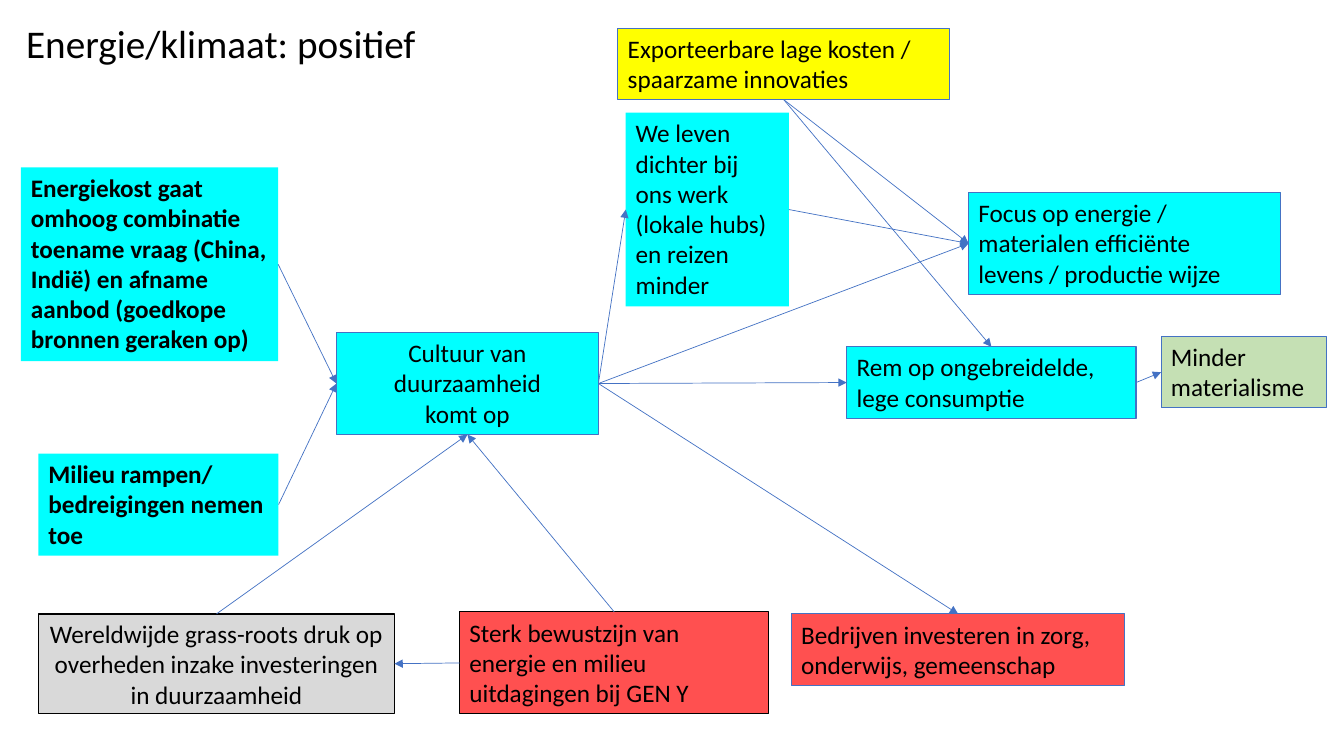
from dataclasses import dataclass

from lxml import etree
from pptx import Presentation
from pptx.dml.color import RGBColor
from pptx.enum.shapes import MSO_CONNECTOR, MSO_SHAPE
from pptx.enum.text import MSO_ANCHOR, MSO_AUTO_SIZE, PP_ALIGN
from pptx.oxml.ns import qn
from pptx.util import Cm, Pt

RECTANGLE = MSO_SHAPE.RECTANGLE
STRAIGHT = MSO_CONNECTOR.STRAIGHT
GROW = MSO_AUTO_SIZE.SHAPE_TO_FIT_TEXT
FIXED = MSO_AUTO_SIZE.NONE
TOP_ANCHOR, MIDDLE = MSO_ANCHOR.TOP, MSO_ANCHOR.MIDDLE
LEFT_ALIGN, CENTER = PP_ALIGN.LEFT, PP_ALIGN.CENTER
TOP, LEFT, BOTTOM, RIGHT = range(4)


@dataclass(frozen=True)
class Theme:
    font: str = "Calibri"
    title_size: float = 28
    body_size: float = 18
    border_width: float = 0.75
    heavy_width: float = 1
    arrow_width: float = 0.5
    text: str = "000000"
    blue: str = "4472C4"
    cyan: str = "00FFFF"
    red: str = "FF5050"
    yellow: str = "FFFF00"
    grey: str = "D9D9D9"
    green: str = "C5E0B4"


@dataclass(frozen=True)
class Box:
    left: float
    top: float
    width: float
    height: float

    def within(self, outer):
        return Box(outer.left + self.left, outer.top + self.top, self.width, self.height)

    def lengths(self):
        return Cm(self.left), Cm(self.top), Cm(self.width), Cm(self.height)


@dataclass(frozen=True)
class Factor:
    text: str
    box: Box
    fill: str
    border: str = ""
    border_width: float = Theme.border_width
    bold: bool = False
    align: int = LEFT_ALIGN
    anchor: int = TOP_ANCHOR
    autosize: int = GROW


THEME = Theme()
TITLE_BOX = Box(0.41, -0.69, 29.21, 3.68)
DIAGRAM_BOX = Box(0.5, 0.7, 33, 17.3)

# Factor boxes are measured in cm from the corner of the diagram.
FACTORS = {
    "energy_cost": Factor(
        "Energiekost gaat omhoog combinatie toename vraag (China, Indië) "
        "en afname aanbod (goedkope bronnen geraken op)",
        Box(0.03, 3.52, 6.48, 4.88), THEME.cyan, bold=True),
    "disasters": Factor(
        "Milieu rampen/ bedreigingen nemen toe",
        Box(0.47, 10.73, 6.05, 2.57), THEME.cyan, bold=True),
    "gen_y": Factor(
        "Sterk bewustzijn van energie en milieu uitdagingen bij GEN Y",
        Box(11.08, 14.72, 7.8, 2.57), THEME.red, THEME.text),
    "grass_roots": Factor(
        "Wereldwijde grass-roots druk op overheden inzake investeringen in duurzaamheid",
        Box(0.47, 14.77, 8.97, 2.51), THEME.grey, THEME.text, THEME.heavy_width,
        align=CENTER, anchor=MIDDLE, autosize=FIXED),
    "innovations": Factor(
        "Exporteerbare lage kosten / spaarzame innovaties",
        Box(15.07, 0.01, 8.36, 1.8), THEME.yellow, THEME.blue),
    "culture": Factor(
        "Cultuur van duurzaamheid\nkomt op",
        Box(7.98, 7.68, 6.6, 2.57), THEME.cyan, THEME.blue, align=CENTER),
    "consumption": Factor(
        "Rem op ongebreidelde, lege consumptie",
        Box(20.84, 8.04, 7.29, 1.8), THEME.cyan, THEME.blue),
    "efficiency": Factor(
        "Focus op energie / materialen efficiënte levens / productie wijze",
        Box(23.91, 4.15, 7.87, 2.57), THEME.cyan, THEME.blue),
    "local_hubs": Factor(
        "We leven dichter bij ons werk (lokale hubs) en reizen minder",
        Box(15.27, 2.14, 4.11, 4.88), THEME.cyan),
    "materialism": Factor(
        "Minder materialisme",
        Box(28.76, 7.78, 4.17, 1.8), THEME.green, THEME.blue),
    "companies": Factor(
        "Bedrijven investeren in zorg, onderwijs, gemeenschap",
        Box(19.44, 14.77, 8.41, 1.8), THEME.red, THEME.blue),
}

INFLUENCES = [
    ("gen_y", TOP, "culture", BOTTOM),
    ("grass_roots", TOP, "culture", BOTTOM),
    ("gen_y", LEFT, "grass_roots", RIGHT),
    ("innovations", BOTTOM, "consumption", TOP),
    ("innovations", BOTTOM, "efficiency", LEFT),
    ("culture", RIGHT, "consumption", LEFT),
    ("culture", RIGHT, "efficiency", LEFT),
    ("energy_cost", RIGHT, "culture", LEFT),
    ("disasters", RIGHT, "culture", LEFT),
    ("culture", RIGHT, "local_hubs", LEFT),
    ("consumption", RIGHT, "materialism", LEFT),
    ("local_hubs", RIGHT, "efficiency", LEFT),
    ("culture", RIGHT, "companies", TOP),
]


def write_text(shape, text, *, size=THEME.body_size, bold=False, align=LEFT_ALIGN,
               anchor=TOP_ANCHOR, autosize=FIXED, spacing=1.0):
    frame = shape.text_frame
    frame.text = text
    frame.word_wrap = True
    frame.vertical_anchor = anchor
    frame.auto_size = autosize
    for paragraph in frame.paragraphs:
        paragraph.alignment = align
        paragraph.line_spacing = spacing
        for run in paragraph.runs:
            run.font.name = THEME.font
            run.font.size = Pt(size)
            run.font.bold = bold
            run.font.color.rgb = RGBColor.from_string(THEME.text)


def draw_title(slide, box):
    title = slide.shapes.add_textbox(*box.lengths())
    write_text(title, "Energie/klimaat: positief", size=THEME.title_size,
               anchor=MIDDLE, spacing=0.9)


def draw_factor(slide, factor, diagram_box):
    rectangle = slide.shapes.add_shape(RECTANGLE, *factor.box.within(diagram_box).lengths())
    rectangle.shadow.inherit = False
    rectangle.fill.solid()
    rectangle.fill.fore_color.rgb = RGBColor.from_string(factor.fill)
    if factor.border:
        rectangle.line.color.rgb = RGBColor.from_string(factor.border)
        rectangle.line.width = Pt(factor.border_width)
    else:
        rectangle.line.fill.background()
    write_text(rectangle, factor.text, bold=factor.bold, align=factor.align,
               anchor=factor.anchor, autosize=factor.autosize)
    return rectangle


def draw_influence(slide, cause, cause_side, effect, effect_side):
    arrow = slide.shapes.add_connector(STRAIGHT, 0, 0, 0, 0)
    arrow.begin_connect(cause, cause_side)
    arrow.end_connect(effect, effect_side)
    arrow.line.color.rgb = RGBColor.from_string(THEME.blue)
    arrow.line.width = Pt(THEME.arrow_width)
    etree.SubElement(arrow.line._get_or_add_ln(), qn("a:tailEnd"), type="triangle")
    etree.SubElement(arrow._element.spPr, qn("a:effectLst"))


def draw_diagram(slide, box):
    drawn = {name: draw_factor(slide, factor, box) for name, factor in FACTORS.items()}
    for cause, cause_side, effect, effect_side in INFLUENCES:
        draw_influence(slide, drawn[cause], cause_side, drawn[effect], effect_side)


def main():
    deck = Presentation()
    deck.slide_width, deck.slide_height = Cm(33.87), Cm(19.05)
    slide = deck.slides.add_slide(deck.slide_layouts[6])
    draw_title(slide, TITLE_BOX)
    draw_diagram(slide, DIAGRAM_BOX)
    deck.save("out.pptx")


if __name__ == "__main__":
    main()
